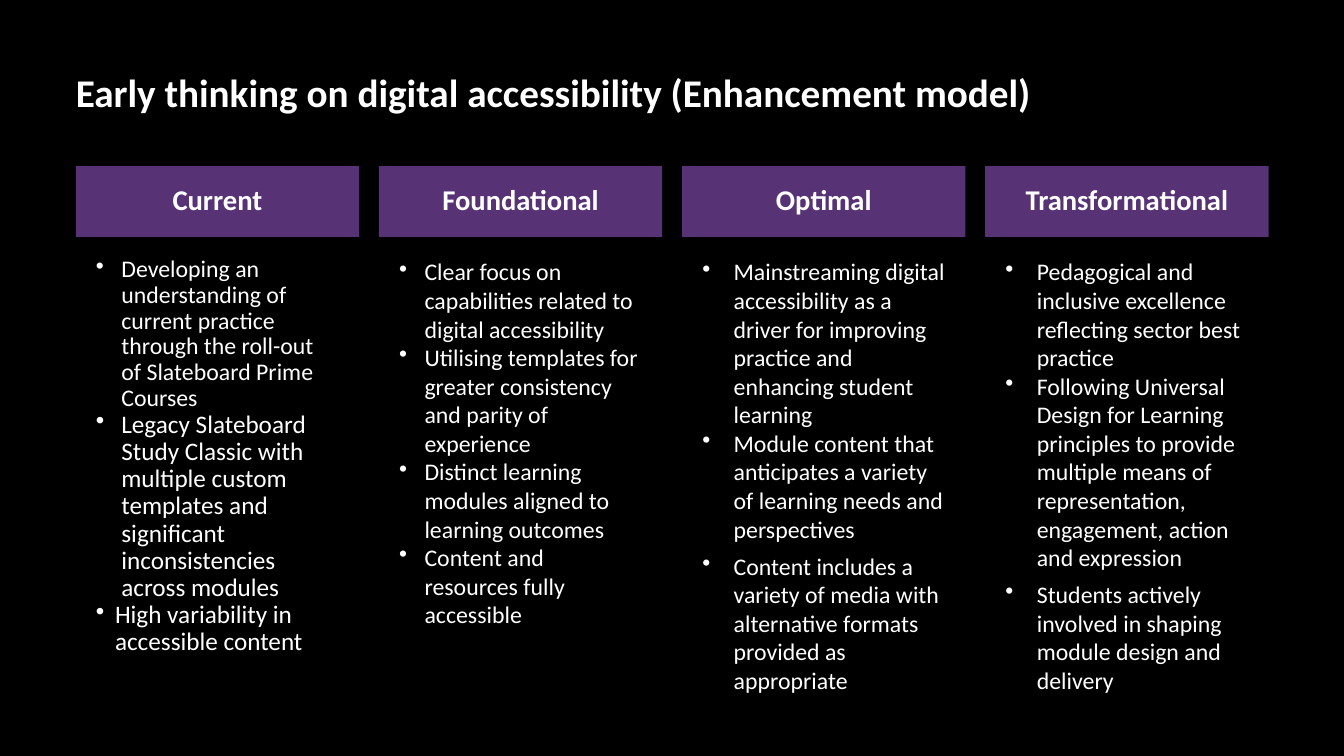
from pptx import Presentation
from pptx.dml.color import RGBColor
from pptx.enum.shapes import MSO_SHAPE as Shape
from pptx.enum.text import MSO_ANCHOR as Anchor, PP_ALIGN as Align
from pptx.oxml.ns import qn
from pptx.util import Cm, Pt
from lxml.etree import SubElement

BLACK = RGBColor(0x00, 0x00, 0x00)
WHITE = RGBColor(0xFF, 0xFF, 0xFF)
PURPLE = RGBColor(0x57, 0x33, 0x76)

LEFT, WIDTH, PITCH = 1.91, 7.14, 7.64
TOP, HEAD, BODY = 4.19, 1.78, 11.99
INSET = 0.51

# Each stage: heading, bullet indent, line spacing, then (text, changes) per bullet
STAGES = [
    ("Current", 0.64, 0.9, [
        ("Developing an understanding of current practice through the "
         "roll-out of Slateboard Prime Courses", {}),
        ("Legacy Slateboard Study Classic with multiple custom templates and "
         "significant inconsistencies across modules", {"size": 18}),
        ("High variability in accessible content",
         {"size": 18, "indent": 0.48}),
    ]),
    ("Foundational", 0.64, 1, [
        ("Clear focus on capabilities related to digital accessibility", {}),
        ("Utilising templates for greater consistency and parity of "
         "experience", {}),
        ("Distinct learning modules aligned to learning outcomes", {}),
        ("Content and resources fully accessible", {}),
    ]),
    ("Optimal", 0.79, 1, [
        ("Mainstreaming digital accessibility as a driver for improving "
         "practice and enhancing student learning", {}),
        ("Module content that anticipates a variety of learning needs and "
         "perspectives", {"after": 6}),
        ("Content includes a variety of media with alternative formats "
         "provided as appropriate", {"after": 6}),
    ]),
    ("Transformational", 0.79, 1, [
        ("Pedagogical and inclusive excellence reflecting sector best "
         "practice", {}),
        ("Following Universal Design for Learning principles to provide "
         "multiple means of representation, engagement, action and "
         "expression", {"after": 6}),
        ("Students actively involved in shaping module design and delivery",
         {"after": 6}),
    ]),
]


class Deck:
    def __init__(self):
        self.file = Presentation()
        self.file.slide_width, self.file.slide_height = Cm(33.87), Cm(19.05)
        self.slide = self.file.slides.add_slide(self.file.slide_layouts[6])
        fill = self.slide.background.fill
        fill.solid()
        fill.fore_color.rgb = BLACK

    def frame(self, shape, inset, anchor):
        """Prepare the text frame of a shape and return it."""
        frame = shape.text_frame
        frame.word_wrap = True
        frame.vertical_anchor = anchor
        frame.margin_left = frame.margin_right = Cm(inset)
        frame.margin_top = frame.margin_bottom = Cm(inset)
        return frame

    def label(self, para, text, size, bold=False, line=1, after=0):
        """Fill a paragraph with styled text."""
        para.text = text
        para.line_spacing = line
        para.space_after = Pt(after)
        font = para.font
        font.name, font.size, font.bold = "Calibri", Pt(size), bold
        font.color.rgb = WHITE

    def title(self, text):
        box = self.slide.shapes.add_textbox(
            Cm(LEFT), Cm(0.81), Cm(30.05), Cm(2.11))
        frame = self.frame(box, 0, Anchor.BOTTOM)
        self.label(frame.paragraphs[0], text, 28, bold=True)

    def header(self, left, text):
        bar = self.slide.shapes.add_shape(
            Shape.RECTANGLE, Cm(left), Cm(TOP), Cm(WIDTH), Cm(HEAD))
        bar.shadow.inherit = False
        bar.fill.solid()
        bar.fill.fore_color.rgb = PURPLE
        bar.line.fill.background()
        para = self.frame(bar, INSET, Anchor.MIDDLE).paragraphs[0]
        self.label(para, text, 20.4, bold=True, line=0.9)
        para.alignment = Align.CENTER

    def bullets(self, left, items, indent, line):
        box = self.slide.shapes.add_textbox(
            Cm(left), Cm(TOP + HEAD), Cm(WIDTH), Cm(BODY))
        frame = self.frame(box, INSET, Anchor.TOP)
        for i, (text, style) in enumerate(items):
            para = frame.add_paragraph() if i else frame.paragraphs[0]
            self.label(para, text, style.get("size", 17), line=line,
                       after=style.get("after", 0))
            self.mark(para, style.get("indent", indent))

    def mark(self, para, indent):
        """Give a paragraph a bullet with a hanging indent."""
        props = para._p.get_or_add_pPr()
        props.set("marL", str(Cm(indent)))
        props.set("indent", str(-Cm(indent)))
        sign = SubElement(props, qn("a:buChar"), char="•")
        props.find(qn("a:defRPr")).addprevious(sign)


def main():
    deck = Deck()
    deck.title("Early thinking on digital accessibility (Enhancement model)")
    for i, (name, indent, line, items) in enumerate(STAGES):
        left = LEFT + i * PITCH
        deck.header(left, name)
        deck.bullets(left, items, indent, line)
    deck.file.save("out.pptx")


if __name__ == "__main__":
    main()
